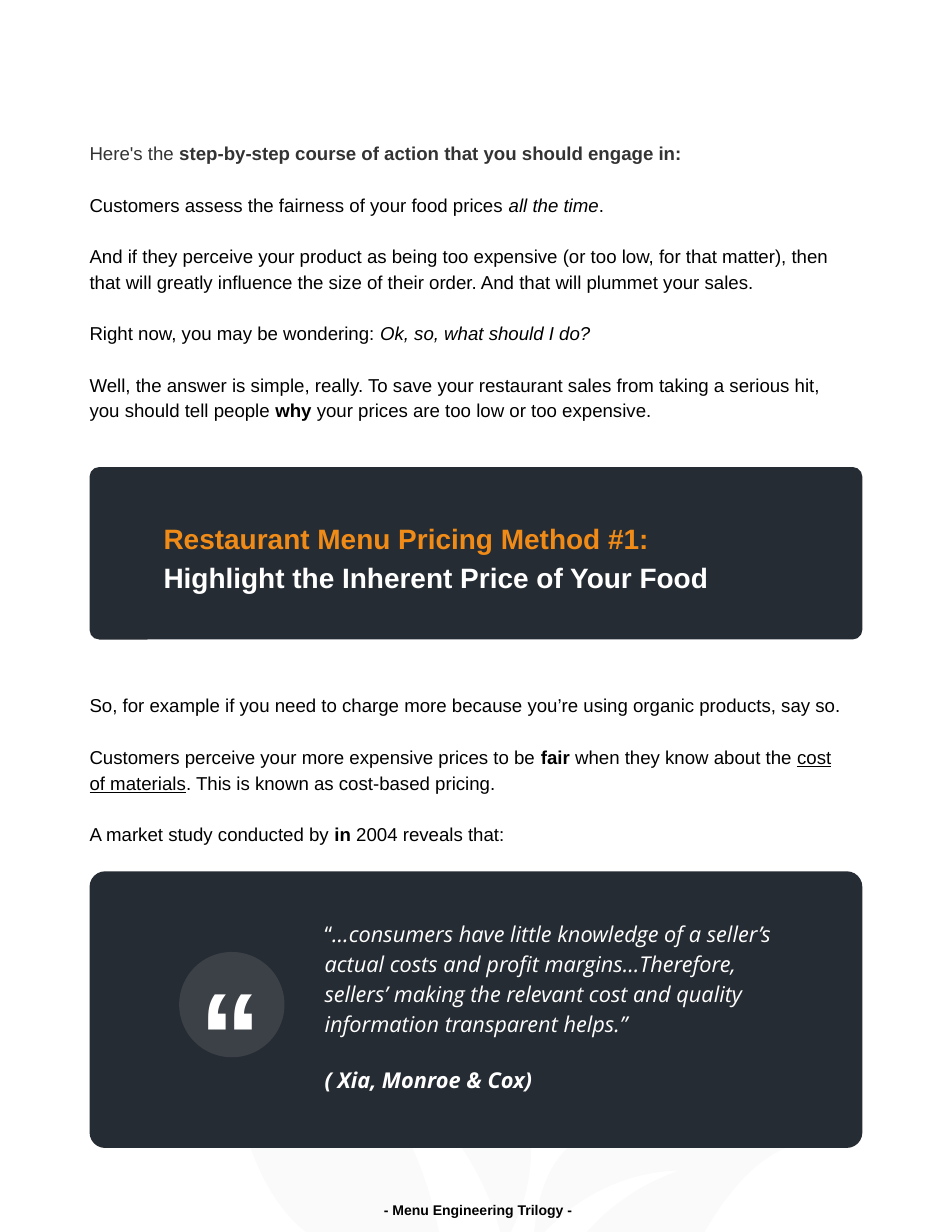
from pptx import Presentation
from pptx.dml.color import RGBColor
from pptx.enum import shapes, text
from pptx.oxml.ns import qn
from pptx.util import Inches, Pt
from lxml import etree

COLORS = {"ink": "000000", "grey": "333333", "panel": "262C33",
          "orange": "F08B18", "white": "FFFFFF", "leaf": "FAFAFA"}
LEFT, WIDTH = 0.8, 6.9
PAGE_W, PAGE_H = 8.5, 11

# Each paragraph is a list of (words, style); b, i and u stand for bold, italic, underline.
INTRO = [
    [("Here's the ", ""), ("step-by-step course of action that you should engage in:", "b")],
    [("Customers assess the fairness of your food prices ", ""), ("all the time", "i"), (".", "")],
    [("And if they perceive your product as being too expensive (or too low, for that matter), "
      "then that will greatly influence the size of their order. And that will plummet your "
      "sales.", "")],
    [("Right now, you may be wondering: ", ""), ("Ok, so, what should I do?", "i")],
    [("Well, the answer is simple, really. To save your restaurant sales from taking a serious "
      "hit, you should tell people", ""), (" why ", "b"),
     ("your prices are too low or too expensive.", "")],
]
HEADING = [[("Restaurant Menu Pricing Method #1:", "b")],
           [("Highlight the Inherent Price of Your Food", "b")]]
EXAMPLE = [
    [("So, for example if you need to charge more because you’re using organic products, "
      "say so.", "")],
    [("Customers perceive your more expensive prices to be ", ""), ("fair", "b"),
     (" when they know about the ", ""), ("cost of materials", "u"),
     (". This is known as cost-based pricing.", "")],
    [("A market study conducted by ", ""), ("in ", "b"), ("2004 reveals that:", "")],
]
QUOTE = [
    [("“", ""), ("…consumers have little knowledge of a seller’s actual costs and profit "
                 "margins…Therefore, sellers’ making the relevant cost and quality information "
                 "transparent helps.”", "i")],
    [("( Xia, Monroe & Cox)", "bi")],
]
QUOTE_MARK = [[("“", "b")]]
FOOTER = [[(" - Menu Engineering Trilogy -", "b")]]

# A leaf is a start point and its curved edges, each a (bend, end) pair.
# A bend of None makes the edge straight.
LARGE_LEAF = ((2.73, PAGE_H), [
    ((2.18, 10.56), (2.03, 9.31)),    # lower left side
    ((1.92, 8.44), (1.36, 8.01)),     # up to the tip
    ((3.16, 8.12), (4.43, 9.22)),     # upper side
    ((4.98, 10.19), (4.56, PAGE_H)),  # right side
    (None, (4.47, PAGE_H)),
    ((4.16, 9.88), (2.89, 9.15)),     # vein, outer side
    ((3.7, 9.9), (3.92, PAGE_H)),     # vein, inner side
])
SMALL_LEAF = ((4.77, PAGE_H), [
    ((4.84, 10.3), (5.26, 10.13)),    # left side
    ((6.16, 9.85), (7.14, 10.21)),    # upper side to the tip
    ((6.69, 10.31), (6.29, PAGE_H)),  # right side
    (None, (5.24, PAGE_H)),
    ((5.58, 10.62), (6.07, 10.45)),   # vein, lower side
    ((5.38, 10.47), (4.86, PAGE_H)),  # vein, upper side
])


def rgb(name):
    return RGBColor.from_string(COLORS[name])


def paint(sp, color, alpha=None):
    """Fill without line or shadow; alpha is the opacity in percent."""
    sp.shadow.inherit = False
    sp.fill.solid()
    sp.fill.fore_color.rgb = rgb(color)
    sp.line.fill.background()
    if alpha is not None:
        node = sp.fill._xPr.find(qn("a:solidFill"))[0]
        etree.SubElement(node, qn("a:alpha")).set("val", str(alpha * 1000))


def curve(start, bend, end, steps=16):
    """Points after start along a quadratic curve pulled towards bend."""
    if bend is None:
        return [end]
    ts = [n / steps for n in range(1, steps + 1)]
    return [tuple((1 - t) ** 2 * a + 2 * t * (1 - t) * b + t ** 2 * c
                  for a, b, c in zip(start, bend, end)) for t in ts]


def add_leaf(s, start, edges):
    # Freeform points are whole numbers, so they are given in EMU.
    fb = s.shapes.build_freeform(*map(Inches, start))
    corner = start
    for bend, end in edges:
        points = [(Inches(x), Inches(y)) for x, y in curve(corner, bend, end)]
        fb.add_line_segments(points, close=False)
        corner = end
    fb.add_line_segments([tuple(map(Inches, start))], close=True)
    paint(fb.convert_to_shape(), "leaf")


def write(sp, paragraphs, size, colors, font="Arial", spacing=1.0, gap=0,
          left_inset=0.1, anchor=text.MSO_ANCHOR.TOP, align=text.PP_ALIGN.LEFT):
    """Fill a shape with styled runs; colors has one name per paragraph."""
    tf = sp.text_frame
    tf.word_wrap = True
    tf.auto_size = text.MSO_AUTO_SIZE.NONE
    tf.vertical_anchor = anchor
    tf.margin_left, tf.margin_right = Inches(left_inset), Inches(0.1)
    tf.margin_top = tf.margin_bottom = Inches(0.05)
    for n, (runs, color) in enumerate(zip(paragraphs, colors)):
        p = tf.add_paragraph() if n else tf.paragraphs[0]
        p.alignment, p.line_spacing = align, spacing
        p.space_before, p.space_after = Pt(0), Pt(gap)
        for words, style in runs:
            r = p.add_run()
            r.text = words
            f = r.font
            f.name, f.size, f.color.rgb = font, Pt(size), rgb(color)
            f.bold, f.italic, f.underline = "b" in style, "i" in style, "u" in style


def add_text(s, box, *args, **options):
    write(s.shapes.add_textbox(*map(Inches, box)), *args, **options)


def add_panel(s, top, height):
    sp = s.shapes.add_shape(shapes.MSO_SHAPE.ROUNDED_RECTANGLE,
                            *map(Inches, (LEFT, top, WIDTH, height)))
    sp.adjustments[0] = 0.056
    paint(sp, "panel")


def add_heading(s):
    title = s.shapes.title
    s.shapes._spTree.append(title._element)  # bring the heading in front of its panel
    title.left, title.top, title.width, title.height = map(Inches, (1.36, 4.56, 6.22, 0.8))
    write(title, HEADING, 18, ["orange", "white"], spacing=1.15,
          anchor=text.MSO_ANCHOR.MIDDLE)


def add_quote(s):
    add_text(s, (2.8, 8.14, 4.33, 1.8), QUOTE, 14, ["white"] * 2,
             font="Open Sans", spacing=1.15, gap=16.5)
    disc = s.shapes.add_shape(shapes.MSO_SHAPE.OVAL, *map(Inches, (1.6, 8.5, 0.94, 0.94)))
    paint(disc, "white", alpha=10)
    add_text(s, (1.68, 8.48, 0.62, 1.45), QUOTE_MARK, 80, ["white"],
             anchor=text.MSO_ANCHOR.MIDDLE)


def main():
    prs = Presentation()
    prs.slide_width, prs.slide_height = Inches(PAGE_W), Inches(PAGE_H)
    s = prs.slides.add_slide(prs.slide_layouts[5])

    for leaf in (LARGE_LEAF, SMALL_LEAF):
        add_leaf(s, *leaf)

    body = dict(spacing=1.15, gap=16.5, left_inset=0)
    add_text(s, (LEFT, 1.19, WIDTH, 2.8), INTRO, 12, ["grey"] + ["ink"] * 4, **body)
    add_panel(s, 4.17, 1.54)
    add_heading(s)
    add_text(s, (LEFT, 6.12, WIDTH, 1.6), EXAMPLE, 12, ["ink"] * 3, **body)
    add_panel(s, 7.78, 2.47)
    add_quote(s)
    add_text(s, (0, 10.6, PAGE_W, 0.4), FOOTER, 9, ["ink"],
             anchor=text.MSO_ANCHOR.MIDDLE, align=text.PP_ALIGN.CENTER)
    prs.save("out.pptx")


if __name__ == "__main__":
    main()
